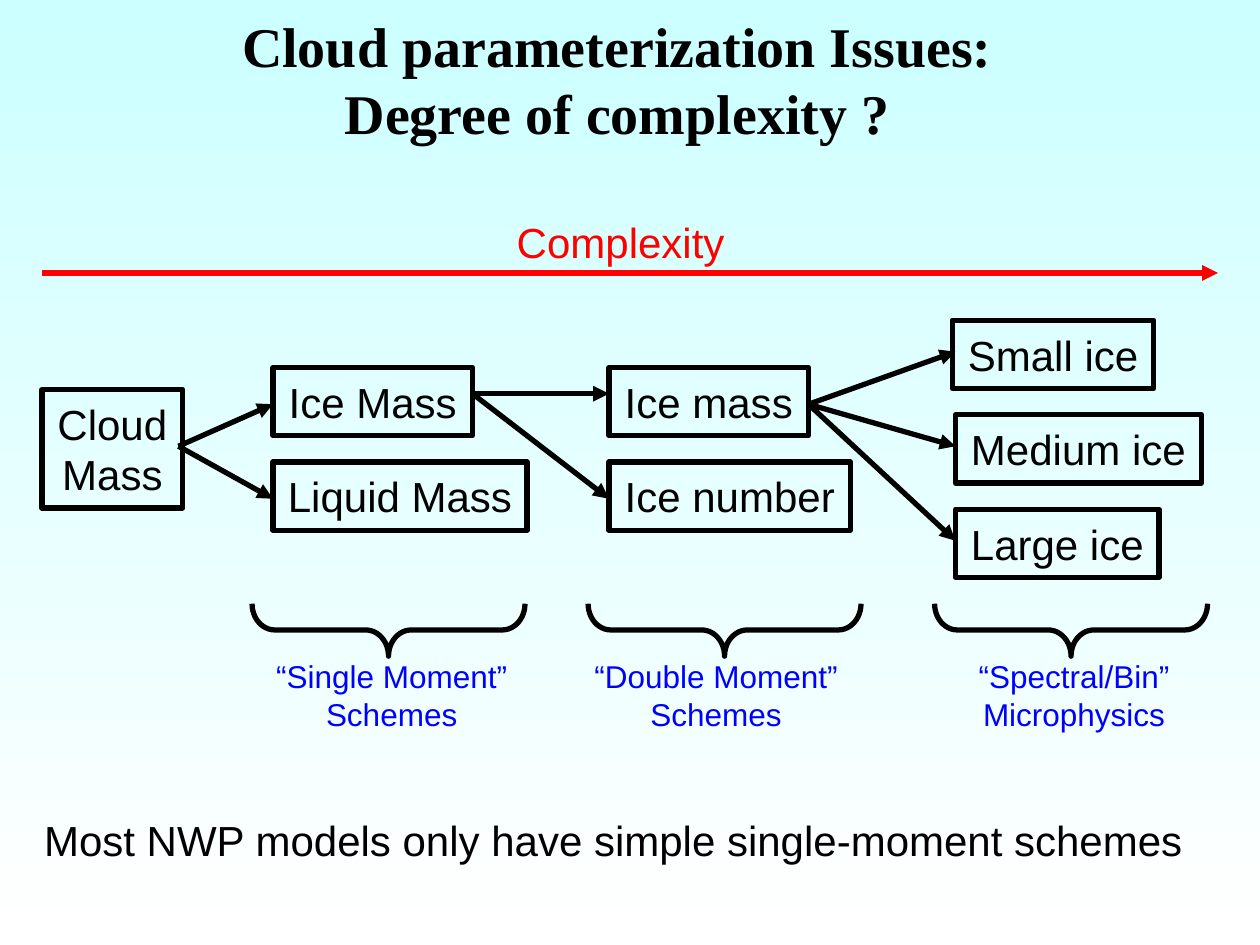
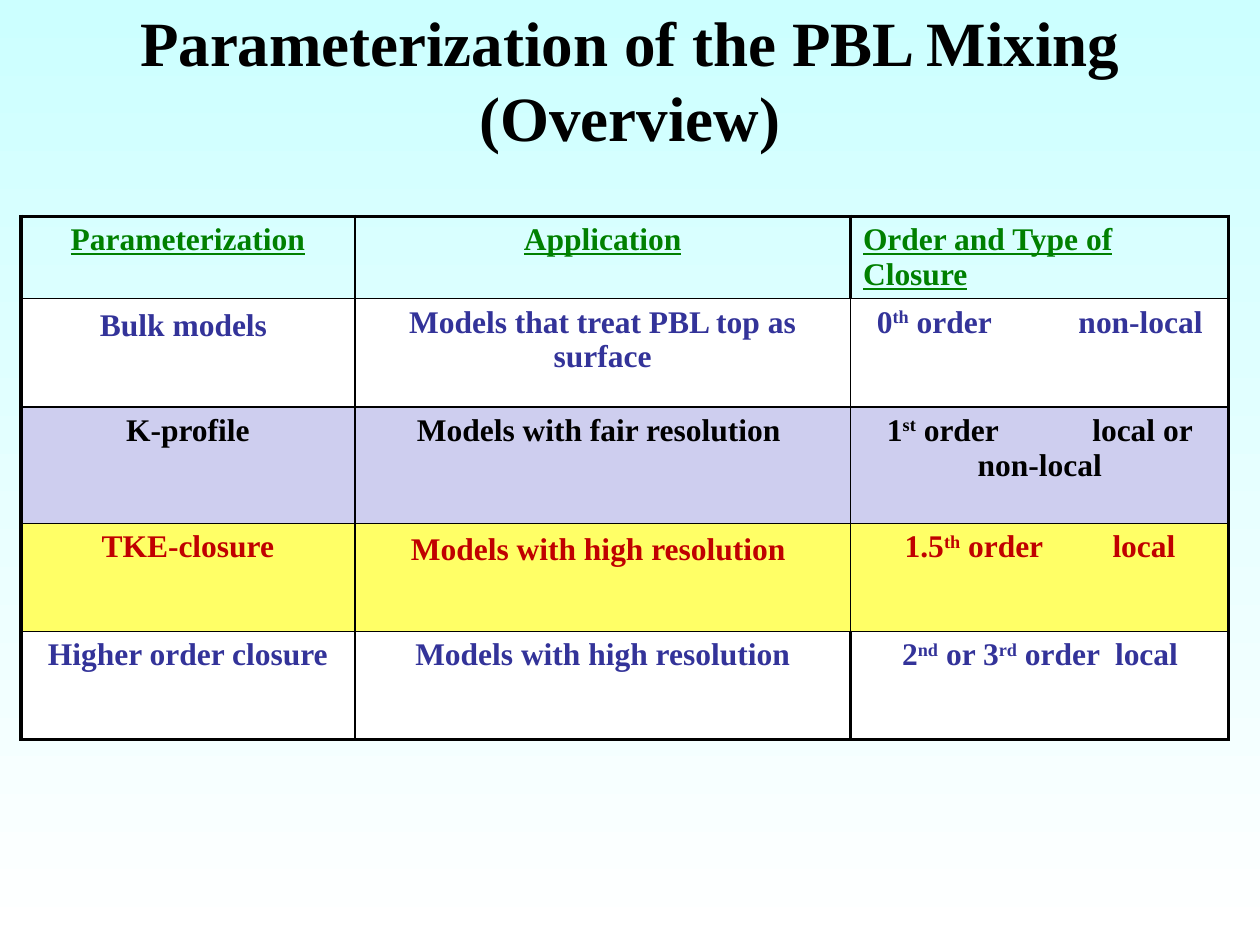
from dataclasses import dataclass
from typing import NamedTuple

from pptx import Presentation
from pptx.dml.color import RGBColor
from pptx.enum.shapes import MSO_CONNECTOR, MSO_SHAPE
from pptx.enum.text import MSO_ANCHOR, MSO_AUTO_SIZE, PP_ALIGN
from pptx.oxml.ns import qn
from pptx.util import Inches, Pt
from lxml import etree

LEFT, CENTER = PP_ALIGN.LEFT, PP_ALIGN.CENTER
MIDDLE = MSO_ANCHOR.MIDDLE
NO_FIT, GROW = MSO_AUTO_SIZE.NONE, MSO_AUTO_SIZE.SHAPE_TO_FIT_TEXT
RECT, BRACE = MSO_SHAPE.RECTANGLE, MSO_SHAPE.RIGHT_BRACE
STRAIGHT = MSO_CONNECTOR.STRAIGHT

COLORS = {
    "sky": "CCFFFF", "white": "FFFFFF", "black": "000000", "red": "FF0000",
    "blue": "0000FF", "green": "008000", "indigo": "333399",
    "crimson": "C00000", "lilac": "CECEEF", "yellow": "FFFF66",
}
SANS, SERIF = "Arial", "Times New Roman"
BREAK = "\v"

# The slide is a grid of 120 columns by 90 rows of square cells
COLUMNS = 120
WIDTH, HEIGHT = Inches(10), Inches(7.5)
BOX_HEIGHT, BOX_PITCH = 6.5, 9


class Run(NamedTuple):
    text: str
    size: float | None = None
    raised: bool = False


class Box(NamedTuple):
    text: str
    width: float
    shift: float = 0


@dataclass
class Stage:
    """A column of boxes, the arrows that reach it, and its scheme name."""
    left: float
    top: float
    boxes: list[Box]
    source: tuple[float, float]
    targets: list[float]
    brace_center: float
    label: str
    label_left: float
    label_width: float


@dataclass
class Closure:
    """A table row; offset and tabs place the two parts of the last cell."""
    cells: list[list[Run]]
    color: str
    fill: str | None
    height: float
    offset: float | None = None
    tabs: tuple[float, ...] = ()


STAGES = [
    Stage(26, 35, [Box("Ice Mass", 19), Box("Liquid Mass", 24.2)],
          (17, 42.5), [38.5, 47.5], 37,
          "“Single Moment”\nSchemes", 25.1, 24.4),
    Stage(58, 35, [Box("Ice mass", 19), Box("Ice number", 23)],
          (45, 37.5), [37.5, 47.5], 69,
          "“Double Moment”\nSchemes", 55.4, 25.6),
    Stage(91, 30.5, [Box("Small ice", 19.2, -0.3), Box("Medium ice", 23.4),
                     Box("Large ice", 19.4)],
          (77, 38.5), [33.5, 42.5, 51.5], 102,
          "“Spectral/Bin”\nMicrophysics", 92, 20.6),
]

CLOSURES = [
    Closure([[Run("Parameterization")], [Run("Application")],
             [Run("Order and Type of Closure")]], "green", None, 7.8),
    Closure([[Run("Bulk models"), Run(" ", 20)],
             [Run("Models that treat PBL top as surface")],
             [Run("0"), Run("th", raised=True), Run(" order\tnon-local")]],
            "indigo", "white", 10.3, 0.21, (1.6,)),
    Closure([[Run("K-profile")], [Run("Models with fair resolution ")],
             [Run("1"), Run("st", raised=True), Run(" order\tlocal or"),
              Run(BREAK), Run("\tnon-local")]],
            "black", "lilac", 11.1, 0.29, (0.72, 1.63)),
    Closure([[Run("TKE-closure")],
             [Run("Models with high resolution"), Run(" ", 20)],
             [Run("1.5"), Run("th", raised=True), Run(" order\tlocal")]],
            "crimson", "yellow", 10.3, 0.43, (1.65,)),
    Closure([[Run("Higher order closure")],
             [Run("Models with high resolution")],
             [Run("2"), Run("nd", raised=True), Run(" or 3"),
              Run("rd", raised=True), Run(" order\tlocal")]],
            "indigo", "white", 10.3, 0.41, (1.69,)),
]
TABLE_COLUMNS = [31.8, 47.2, 36]


def grid(cells: float) -> int:
    return round(cells * WIDTH / COLUMNS)


def rgb(name: str) -> RGBColor:
    return RGBColor.from_string(COLORS[name])


def write(tf, text, size=24, font=SANS, color="black", bold=False,
          underline=False, align=CENTER, before=0) -> None:
    """Fill a text frame from a string, one line a paragraph, or from runs."""
    lines = [[Run(t)] for t in text.split("\n")] if isinstance(text, str) else [text]
    for i, line in enumerate(lines):
        p = tf.add_paragraph() if i else tf.paragraphs[0]
        p.alignment = align
        p.space_before = Pt(before)
        for part in line:
            if part.text == BREAK:
                p.add_line_break()
                continue
            r = p.add_run()
            r.text = part.text
            r.font.name = font
            r.font.size = Pt(part.size or size)
            r.font.bold = bold
            r.font.underline = underline
            r.font.color.rgb = rgb(color)
            if part.raised:
                r._r.get_or_add_rPr().set("baseline", "30000")


def place(sp, left: float, top: float, width: float, height: float) -> None:
    sp.left, sp.top, sp.width, sp.height = map(grid, (left, top, width, height))


def add_slide(prs, title, size, left, width):
    s = prs.slides.add_slide(prs.slide_layouts[5])
    sp = s.shapes.title
    place(sp, left, 0, width, 15)
    tf = sp.text_frame
    tf.auto_size, tf.vertical_anchor = NO_FIT, MIDDLE
    write(tf, title, size, SERIF, bold=True)
    return s


def add_text(s, text: str, left: float, top: float, width: float,
             height: float, **style) -> None:
    sp = s.shapes.add_textbox(*map(grid, (left, top, width, height)))
    sp.text_frame.word_wrap = False
    sp.text_frame.auto_size = GROW
    write(sp.text_frame, text, **style)


def add_outline(s, kind, left: float, top: float, width: float, height: float):
    sp = s.shapes.add_shape(kind, *map(grid, (left, top, width, height)))
    sp.shadow.inherit = False
    sp.fill.background()
    sp.line.color.rgb = rgb("black")
    sp.line.width = Pt(3)
    return sp


def add_box(s, text: str, left: float, top: float, width: float,
            height: float = BOX_HEIGHT) -> None:
    tf = add_outline(s, RECT, left, top, width, height).text_frame
    tf.word_wrap = False
    tf.auto_size = GROW
    write(tf, text)


def add_arrow(s, start: tuple[float, float], end: tuple[float, float],
              color: str = "black") -> None:
    c = s.shapes.add_connector(STRAIGHT, *map(grid, (*start, *end)))
    c.line.color.rgb = rgb(color)
    c.line.width = Pt(3)
    etree.SubElement(c.line._get_or_add_ln(), qn("a:tailEnd"), type="triangle")
    etree.SubElement(c._element.spPr, qn("a:effectLst"))


def set_borders(cell, **widths: float) -> None:
    """Draw black sides; they go before the fill of the cell."""
    tcPr = cell._tc.get_or_add_tcPr()
    for i, (side, width) in enumerate(widths.items()):
        ln = etree.Element(qn(f"a:ln{side}"), w=str(Pt(width)))
        fill = etree.SubElement(ln, qn("a:solidFill"))
        etree.SubElement(fill, qn("a:srgbClr"), val=COLORS["black"])
        tcPr.insert(i, ln)


def set_tabs(p, stops: tuple[float, ...]) -> None:
    tabs = etree.SubElement(p._p.get_or_add_pPr(), qn("a:tabLst"))
    for stop in stops:
        etree.SubElement(tabs, qn("a:tab"), pos=str(Inches(stop)), algn="l")


def build_complexity(prs) -> None:
    s = add_slide(prs, [Run("Cloud parameterization Issues:"), Run(BREAK),
                        Run("Degree of complexity ?")], 32, 4.8, 108)
    # Complexity axis
    add_arrow(s, (4, 26), (116, 26), "red")
    add_text(s, "Complexity", 48, 20, 22.2, 6, color="red")

    # Stages of growing detail
    add_box(s, "Cloud\nMass", 4, 37.1, 13.4, 11.3)
    for stage in STAGES:
        for i, box in enumerate(stage.boxes):
            add_box(s, box.text, stage.left + box.shift,
                    stage.top + i * BOX_PITCH, box.width)
        for y in stage.targets:
            add_arrow(s, stage.source, (stage.left, y))
        brace = add_outline(s, BRACE, stage.brace_center - 2.5, 47, 5, 26)
        brace.rotation = 90
        brace.adjustments[0] = 0.433
        add_text(s, stage.label, stage.label_left, 62, stage.label_width, 8.4,
                 size=18, color="blue")

    # Conclusion
    add_text(s, "Most NWP models only have simple single-moment schemes",
             2.4, 77, 112, 6)


def build_overview(prs) -> None:
    s = add_slide(prs, "Parameterization of the PBL Mixing (Overview)",
                  36, 0, COLUMNS)
    rows, cols = len(CLOSURES), len(TABLE_COLUMNS)
    size = sum(TABLE_COLUMNS), sum(c.height for c in CLOSURES)
    table = s.shapes.add_table(rows, cols, *map(grid, (2, 20.6, *size))).table
    table.first_row = table.horz_banding = False
    for column, width in zip(table.columns, TABLE_COLUMNS):
        column.width = grid(width)

    for i, closure in enumerate(CLOSURES):
        table.rows[i].height = grid(closure.height)
        edge_row = i in (0, rows - 1)
        for j, runs in enumerate(closure.cells):
            cell, last = table.cell(i, j), j == cols - 1
            write(cell.text_frame, runs, 18, SERIF, closure.color, bold=True,
                  underline=i == 0, align=LEFT if last else CENTER, before=3.6)
            if last and closure.tabs:
                cell.margin_left = Inches(closure.offset)
                cell.margin_right = 0
                set_tabs(cell.text_frame.paragraphs[0], closure.tabs)
            if closure.fill:
                cell.fill.solid()
                cell.fill.fore_color.rgb = rgb(closure.fill)
            else:
                cell.fill.background()
            # Thick frame, and a thick divider in the first and last rows
            thick = {"L": j == 0 or (last and edge_row),
                     "R": last or (j == cols - 2 and edge_row),
                     "T": i == 0, "B": i == rows - 1}
            set_borders(cell, **{k: 2.25 if v else 1 for k, v in thick.items()})


def main() -> None:
    prs = Presentation()
    prs.slide_width, prs.slide_height = WIDTH, HEIGHT
    # Shared background, from sky at the top to white
    fill = prs.slide_master.background.fill
    fill.gradient()
    fill.gradient_angle = 270
    for stop, name in zip(fill.gradient_stops, ("sky", "white")):
        stop.color.rgb = rgb(name)
    build_complexity(prs)
    build_overview(prs)
    prs.save("out.pptx")


if __name__ == "__main__":
    main()
